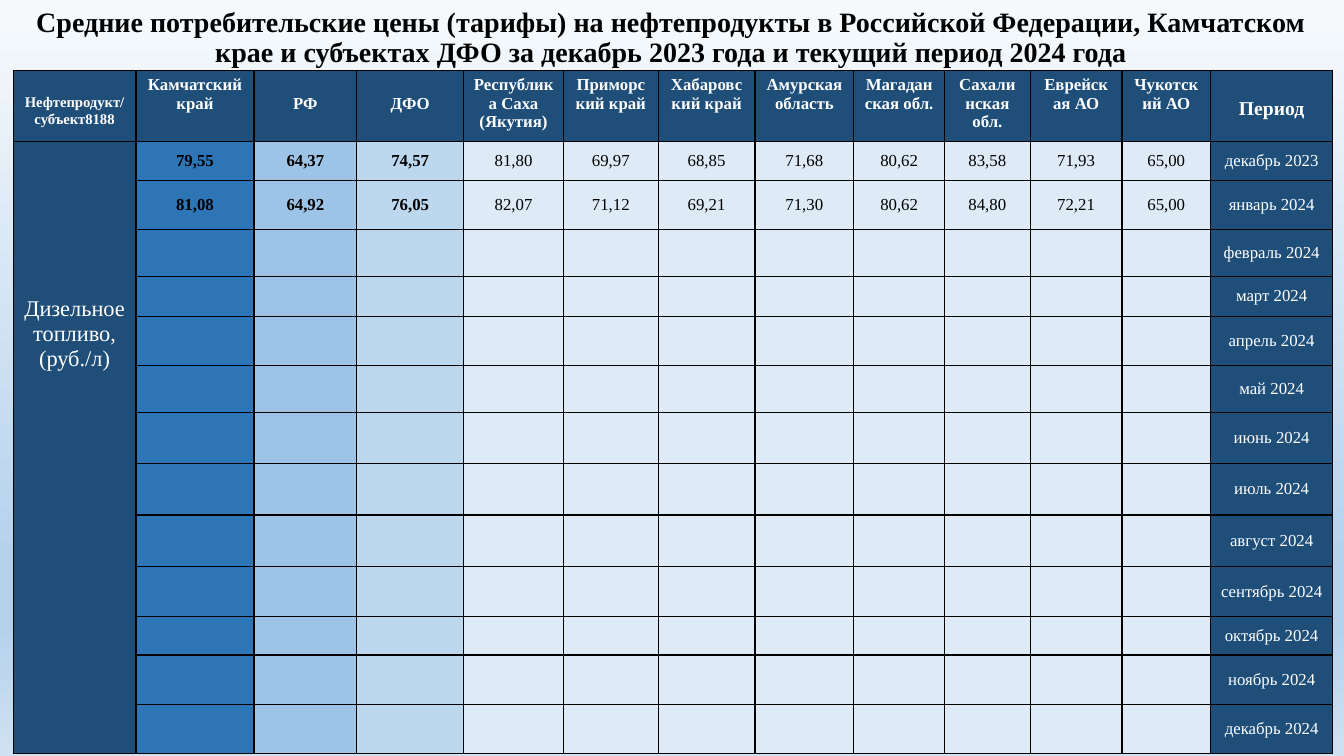
from lxml.etree import SubElement
from pptx import Presentation
from pptx.dml.color import RGBColor
from pptx.enum.text import MSO_ANCHOR as Anchor, MSO_AUTO_SIZE as AutoSize, PP_ALIGN as Align
from pptx.oxml.ns import qn
from pptx.util import Inches, Pt

FONT = "Times New Roman"
NAVY, WHITE, BLACK = "1F4E79", "FFFFFF", "000000"
TITLE = ("Средние потребительские цены (тарифы) на нефтепродукты в Российской Федерации, "
         "Камчатском крае и субъектах ДФО за декабрь 2023 года и текущий период 2024 года")
REGIONS = ["Камчатский край", "РФ", "ДФО", "Республика Саха (Якутия)", "Приморский край",
           "Хабаровский край", "Амурская область", "Магаданская обл.", "Сахалинская обл.",
           "Еврейская АО", "Чукотский АО"]
REGION_FILLS = ["2E75B6", "9DC3E6", "BDD7EE"] + ["DEEBF7"] * 8
MONTHS = ["январь", "февраль", "март", "апрель", "май", "июнь", "июль", "август",
          "сентябрь", "октябрь", "ноябрь", "декабрь"]
PERIODS = ["декабрь 2023"] + [f"{month} 2024" for month in MONTHS]
PRICES = [
    "79,55 64,37 74,57 81,80 69,97 68,85 71,68 80,62 83,58 71,93 65,00".split(),
    "81,08 64,92 76,05 82,07 71,12 69,21 71,30 80,62 84,80 72,21 65,00".split(),
]
COLUMN_WIDTHS = [1.22, 1.17, 1.02, 1.06, 0.99, 0.94, 0.96, 0.98, 0.9, 0.85, 0.91, 0.88, 1.21]
ROW_HEIGHTS = [0.7, 0.39, 0.49, 0.46, 0.4, 0.49, 0.46, 0.51, 0.51, 0.51, 0.5, 0.38, 0.49, 0.49]
HEADER_DROPS = {"РФ": 0.24, "ДФО": 0.24}


def rgb(value):
    return RGBColor.from_string(value)


class PriceSlide:
    """Holds the slide and the shared style of its title, background and table."""

    def __init__(self, deck):
        self.slide = deck.slides.add_slide(deck.slide_layouts[5])

    def background(self, stops):
        fill = self.slide.background.fill
        fill.gradient()
        fill.gradient_angle = 270
        stop_list = self.slide.element.find(".//" + qn("a:gsLst"))
        for old_stop in list(stop_list):
            stop_list.remove(old_stop)
        for percent, color in stops:
            stop = SubElement(stop_list, qn("a:gs"), pos=str(percent * 1000))
            SubElement(stop, qn("a:srgbClr"), val=color)

    def put_text(self, frame, text, size, color, bold):
        frame.text = text
        for paragraph in frame.paragraphs:
            paragraph.alignment = Align.CENTER
            font = paragraph.font
            font.name, font.size, font.bold = FONT, Pt(size), bold
            font.color.rgb = rgb(color)
            if not text:
                SubElement(paragraph._p, qn("a:endParaRPr"), sz=str(size * 100))

    def title(self, text, left, top, width, height):
        title = self.slide.shapes.title
        title.left, title.top = Inches(left), Inches(top)
        title.width, title.height = Inches(width), Inches(height)
        frame = title.text_frame
        self.put_text(frame, text, 20, BLACK, True)
        frame.word_wrap, frame.auto_size = True, AutoSize.NONE
        frame.vertical_anchor = Anchor.MIDDLE
        frame.paragraphs[0].line_spacing = 0.9

    def table(self, left, top, widths, heights):
        frame = self.slide.shapes.add_table(
            len(heights), len(widths), Inches(left), Inches(top),
            Inches(sum(widths)), Inches(sum(heights)))
        table = frame.table
        table.first_row = table.horz_banding = False
        for column, width in zip(table.columns, widths):
            column.width = Inches(width)
        for row, height in zip(table.rows, heights):
            row.height = Inches(height)
        for cell in table.iter_cells():
            self.border(cell)
        return table

    def border(self, cell):
        properties = cell._tc.get_or_add_tcPr()
        for side in ("a:lnL", "a:lnR", "a:lnT", "a:lnB"):
            line = SubElement(properties, qn(side), w=str(Pt(1)))
            SubElement(SubElement(line, qn("a:solidFill")), qn("a:srgbClr"), val=BLACK)

    def cell(self, cell, text, fill, size=12, color=WHITE, bold=False, drop=None):
        cell.fill.solid()
        cell.fill.fore_color.rgb = rgb(fill)
        self.put_text(cell.text_frame, text, size, color, bold)
        if drop is None:
            cell.vertical_anchor = Anchor.MIDDLE
        else:
            cell.vertical_anchor = Anchor.TOP
            cell.margin_top = Inches(drop)


def main():
    deck = Presentation()
    deck.slide_width, deck.slide_height = Inches(13.33), Inches(7.5)
    page = PriceSlide(deck)
    page.background([(0, "F7FAFD"), (74, "B5D2EC"), (83, "B5D2EC"), (100, "CEE1F2")])
    page.title(TITLE, 0.2, 0.14, 12.91, 0.48)

    prices = page.table(0.13, 0.7, COLUMN_WIDTHS, ROW_HEIGHTS)
    period_column = len(REGIONS) + 1
    page.cell(prices.cell(0, 0), "Нефтепродукт/субъект8188", NAVY, 10.5, bold=True, drop=0.24)
    for column, region in enumerate(REGIONS, 1):
        page.cell(prices.cell(0, column), region, NAVY, bold=True,
                  drop=HEADER_DROPS.get(region, 0.05))
    page.cell(prices.cell(0, period_column), "Период", NAVY, 14, bold=True, drop=0.27)

    product = prices.cell(1, 0)
    product.merge(prices.cell(len(PERIODS), 0))
    page.cell(product, "Дизельное топливо,\n(руб./л)", NAVY, 16, drop=1.54)

    for row, period in enumerate(PERIODS, 1):
        values = PRICES[row - 1] if row <= len(PRICES) else [""] * len(REGIONS)
        for column, (value, fill) in enumerate(zip(values, REGION_FILLS), 1):
            page.cell(prices.cell(row, column), value, fill, color=BLACK, bold=column <= 3)
        page.cell(prices.cell(row, period_column), period, NAVY)
    deck.save("out.pptx")


if __name__ == "__main__":
    main()
